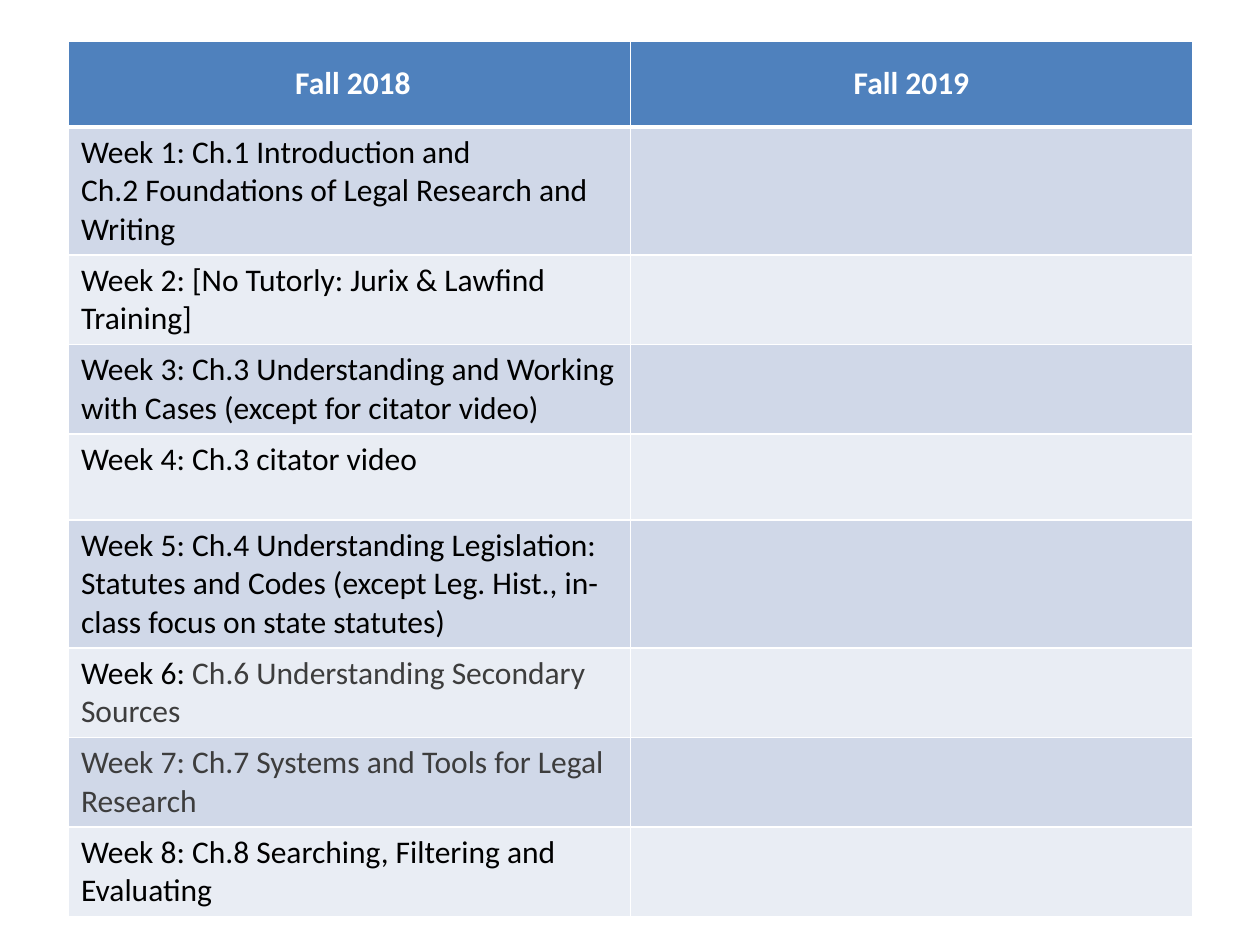
import lxml.etree
import pptx
import pptx.dml.color
import pptx.enum.text
import pptx.oxml.ns
import pptx.util

Cm = pptx.util.Cm
Pt = pptx.util.Pt
RGB = pptx.dml.color.RGBColor

WHITE = RGB(0xFF, 0xFF, 0xFF)
BLACK = RGB(0, 0, 0)
GRAY = RGB(0x3D, 0x3D, 0x3D)
BLUE = RGB(0x4F, 0x81, 0xBD)
BANDS = [RGB(0xD0, 0xD8, 0xE8), RGB(0xE9, 0xED, 0xF4)]

TERMS = [" Fall 2018", "Fall 2019"]
WEEKS = [
    [("Week 1: Ch.1 Introduction and \n"
      "Ch.2 Foundations of Legal Research and Writing", BLACK)],
    [("Week 2: [No Tutorly: Jurix & Lawfind Training]", BLACK)],
    [("Week 3: Ch.3 Understanding and Working with Cases "
      "(except for citator video)", BLACK)],
    [("Week 4: Ch.3 citator video", BLACK)],
    [("Week 5: Ch.4 Understanding Legislation: Statutes and Codes "
      "(except Leg. Hist., in- class focus on state statutes)", BLACK)],
    [("Week 6: ", BLACK), ("Ch.6 Understanding Secondary Sources", GRAY)],
    [("Week 7: Ch.7 Systems and Tools for Legal Research", GRAY)],
    [("Week 8: Ch.8 Searching, Filtering and Evaluating", BLACK)],
]
COL = Cm(11.33)
ROW = Cm(1.73)


def edge(cell, side, width):
    """Add one white border; call in the order L, R, T, B, before the fill."""
    tag = pptx.oxml.ns.qn
    props = cell._tc.get_or_add_tcPr()
    line = lxml.etree.SubElement(props, tag(f"a:ln{side}"), w=str(Pt(width)))
    fill = lxml.etree.SubElement(line, tag("a:solidFill"))
    lxml.etree.SubElement(fill, tag("a:srgbClr"), val=str(WHITE))


def paint(cell, color, top, base):
    for side, width in zip("LRTB", (1, 1, top, base)):
        edge(cell, side, width)
    cell.fill.solid()
    cell.fill.fore_color.rgb = color


def write(cell, parts, bold=False):
    """Fill a cell with (text, color) parts; a newline is a line break."""
    para = cell.text_frame.paragraphs[0]
    para.font.size = Pt(18)
    for text, color in parts:
        for i, line in enumerate(text.split("\n")):
            if i:
                para.add_line_break()
            run = para.add_run()
            run.text = line
            run.font.name = "Calibri"
            run.font.size = Pt(18)
            run.font.bold = bold
            run.font.color.rgb = color
    return para


def head(cell, term):
    paint(cell, BLUE, 1, 3)
    para = write(cell, [(term, WHITE)], True)
    para.alignment = pptx.enum.text.PP_ALIGN.CENTER
    cell.vertical_anchor = pptx.enum.text.MSO_ANCHOR.MIDDLE


def week(table, row, parts):
    for col, text in enumerate((parts, [])):
        cell = table.cell(row, col)
        paint(cell, BANDS[(row - 1) % 2], 3 if row == 1 else 1, 1)
        write(cell, text)


def main():
    deck = pptx.Presentation()
    deck.slide_width, deck.slide_height = Cm(25.4), Cm(19.05)
    slide = deck.slides.add_slide(deck.slide_layouts[6])
    count = len(WEEKS) + 1
    table = slide.shapes.add_table(
        count, 2, Cm(1.38), Cm(0.83), COL * 2, ROW * count).table
    for col, term in enumerate(TERMS):
        head(table.cell(0, col), term)
    for row, parts in enumerate(WEEKS, 1):
        week(table, row, parts)
    deck.save("out.pptx")


if __name__ == "__main__":
    main()
